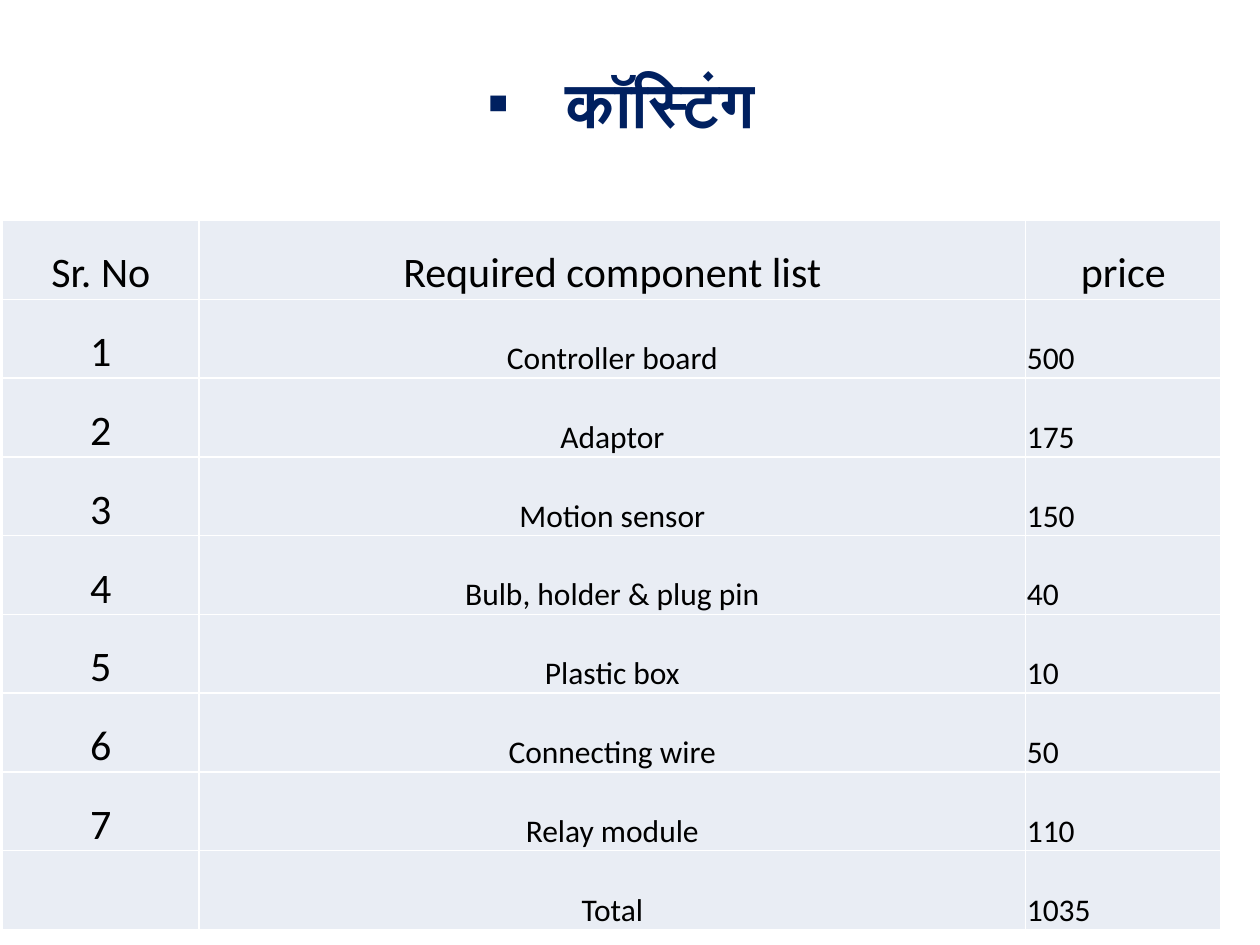
import pptx
import pptx.util
import pptx.dml.color
import pptx.enum.text
import pptx.oxml
import pptx.oxml.ns

Inches = pptx.util.Inches
Pt = pptx.util.Pt
ALIGN = pptx.enum.text.PP_ALIGN
ANCHOR = pptx.enum.text.MSO_ANCHOR

WIDE, HIGH = 10, 7.5
COLORS = {"title": "002060", "text": "000000", "cell": "E9EDF4", "line": "FFFFFF"}
COLS = [1.56, 6.56, 1.55]
ROW = 5.63 / 9
ITEMS = [
    ("Controller board", "500"),
    ("Adaptor", "175"),
    ("Motion sensor", "150"),
    ("Bulb, holder & plug pin", "40"),
    ("Plastic box", "10"),
    ("Connecting wire", "50"),
    ("Relay module", "110"),
]
HEAD = ("Sr. No", "Required component list", "price")
ROWS = [HEAD]
ROWS += [(str(num), name, cost) for num, (name, cost) in enumerate(ITEMS, 1)]
ROWS += [("", "Total", "1035")]


def color(name):
    return pptx.dml.color.RGBColor.from_string(COLORS[name])


def node(tag, attrs="", inner=""):
    space = pptx.oxml.ns.nsdecls("a")
    return pptx.oxml.parse_xml(f"<a:{tag} {space} {attrs}>{inner}</a:{tag}>")


def add_run(para, text, size, font, tone, bold=False):
    run = para.add_run()
    run.text = text
    run.font.size = Pt(size)
    run.font.name = font
    run.font.bold = bold
    run.font.color.rgb = color(tone)


def add_title(slide, text):
    box = slide.shapes.add_textbox(0, 0, Inches(WIDE), Inches(1.62))
    frame = box.text_frame
    frame.word_wrap = True
    frame.vertical_anchor = ANCHOR.MIDDLE
    para = frame.paragraphs[0]
    para.alignment = ALIGN.CENTER
    props = para._p.get_or_add_pPr()
    props.set("marL", str(Inches(0.62)))
    props.set("indent", str(Inches(-0.62)))
    props.append(node("buFont", 'typeface="Arial"'))
    props.append(node("buChar", 'char="▪"'))
    add_run(para, text, 36, "Times New Roman", "title", True)


def add_edges(cell):
    props = cell._tc.get_or_add_tcPr()
    fill = f'<a:solidFill><a:srgbClr val="{COLORS["line"]}"/></a:solidFill>'
    for place, side in enumerate("LRTB"):
        props.insert(place, node(f"ln{side}", f'w="{Pt(1)}"', fill))


def fill_cell(cell, text, size, align):
    cell.fill.solid()
    cell.fill.fore_color.rgb = color("cell")
    add_edges(cell)
    cell.vertical_anchor = ANCHOR.BOTTOM
    cell.margin_left = cell.margin_right = cell.margin_top = Inches(0.01)
    cell.margin_bottom = 0
    if text:
        para = cell.text_frame.paragraphs[0]
        para.alignment = align
        add_run(para, text, size, "Calibri", "text")


def add_grid(slide):
    frame = slide.shapes.add_table(
        len(ROWS), len(COLS), Inches(0.02), Inches(1.75),
        Inches(sum(COLS)), Inches(ROW * len(ROWS)),
    )
    table = frame.table
    table.first_row = table.horz_banding = False
    for col, width in zip(table.columns, COLS):
        col.width = Inches(width)
    for row, texts in enumerate(ROWS):
        table.rows[row].height = Inches(ROW)
        for col, text in enumerate(texts):
            size = 24 if row == 0 or col == 0 else 18
            align = ALIGN.LEFT if row and col == 2 else ALIGN.CENTER
            fill_cell(table.cell(row, col), text, size, align)


def main():
    deck = pptx.Presentation()
    deck.slide_width = Inches(WIDE)
    deck.slide_height = Inches(HIGH)
    slide = deck.slides.add_slide(deck.slide_layouts[6])
    add_title(slide, "कॉस्टिंग ")
    add_grid(slide)
    deck.save("out.pptx")


if __name__ == "__main__":
    main()
